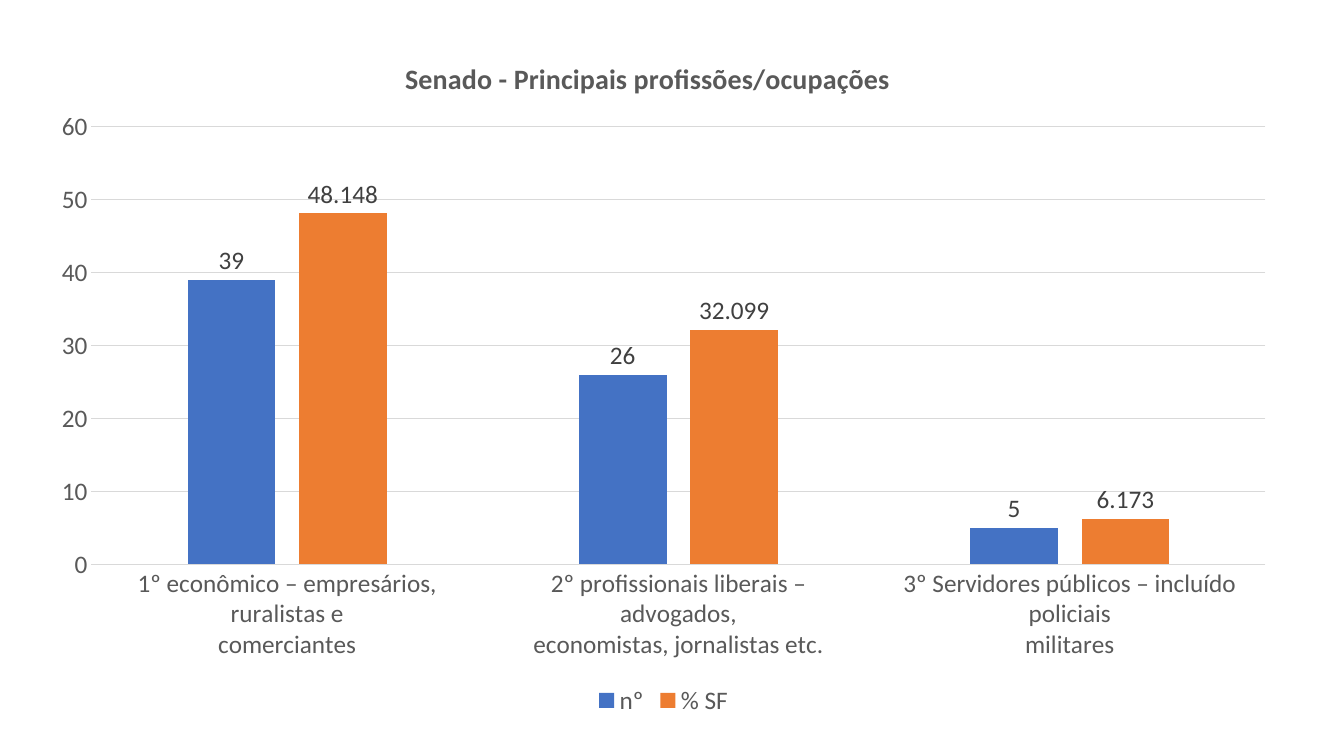
from lxml.etree import SubElement
from pptx import Presentation
from pptx.chart.data import CategoryChartData
from pptx.dml.color import RGBColor
from pptx.enum.chart import (XL_CHART_TYPE, XL_LABEL_POSITION,
                             XL_LEGEND_POSITION, XL_TICK_MARK)
from pptx.oxml.ns import qn
from pptx.util import Inches, Pt

COLORS = {
    "count": "4472C4",
    "share": "ED7D31",
    "text": "595959",
    "label": "404040",
    "grid": "D9D9D9",
}
PROFESSIONS = [
    "1º econômico – empresários, ruralistas e\ncomerciantes",
    "2º profissionais liberais – advogados,\neconomistas, jornalistas etc.",
    "3º Servidores públicos – incluído policiais\nmilitares",
]
# name, values, colour, number format
SERIES = [
    ("nº", (39, 26, 5), "count", "General"),
    ("% SF", (48.148, 32.099, 6.173), "share", "0.000"),
]


class ChartSlide:
    font_name = "Calibri"

    def __init__(self, slide):
        self.slide = slide

    def style_font(self, font, color="text", size=18, bold=False):
        font.name = self.font_name
        font.size = Pt(size)
        font.bold = bold
        font.color.rgb = RGBColor.from_string(COLORS[color])

    def style_line(self, line):
        line.color.rgb = RGBColor.from_string(COLORS["grid"])
        line.width = Pt(0.75)

    def place(self, element, index, inner=False, **fractions):
        """Set a manual layout, in fractions of the chart area."""
        for old in element.findall(qn("c:layout")):
            element.remove(old)
        layout = SubElement(element, qn("c:layout"))
        element.insert(index, layout)
        manual = SubElement(layout, qn("c:manualLayout"))
        if inner:
            SubElement(manual, qn("c:layoutTarget")).set("val", "inner")
        for key in ("x", "y"):
            SubElement(manual, qn(f"c:{key}Mode")).set("val", "edge")
        for key, value in fractions.items():
            SubElement(manual, qn(f"c:{key}")).set("val", str(value))

    def columns(self, left, top, width, height):
        data = CategoryChartData()
        data.categories = PROFESSIONS
        for name, values, _, number_format in SERIES:
            data.add_series(name, values, number_format)
        chart = self.slide.shapes.add_chart(
            XL_CHART_TYPE.COLUMN_CLUSTERED, Inches(left), Inches(top),
            Inches(width), Inches(height), data).chart
        self.style_font(chart.font)
        plot = chart.plots[0]
        plot.gap_width, plot.overlap = 219, -27
        plot.vary_by_categories = False
        for series, (_, _, color, number_format) in zip(plot.series, SERIES):
            series.format.fill.solid()
            series.format.fill.fore_color.rgb = RGBColor.from_string(COLORS[color])
            labels = series.data_labels
            labels.show_value = True
            labels.position = XL_LABEL_POSITION.OUTSIDE_END
            labels.number_format = number_format
            labels.number_format_is_linked = False
            self.style_font(labels.font, "label")
        self.place(chart._chartSpace.chart.plotArea, 0, inner=True,
                   x=0.044, y=0.15, w=0.936, h=0.626)
        return chart

    def title(self, chart, text):
        frame = chart.chart_title.text_frame
        frame.text = text
        self.style_font(frame.paragraphs[0].runs[0].font, size=20, bold=True)
        chart.chart_title.include_in_layout = False
        self.place(chart._chartSpace.chart.find(qn("c:title")), 1, x=0.29, y=0.045)

    def axes(self, chart):
        for axis in (chart.category_axis, chart.value_axis):
            axis.major_tick_mark = axis.minor_tick_mark = XL_TICK_MARK.NONE
            self.style_font(axis.tick_labels.font)
        self.style_line(chart.category_axis.format.line)
        values = chart.value_axis
        values.minimum_scale, values.maximum_scale, values.major_unit = 0, 60, 10
        values.format.line.fill.background()
        values.has_major_gridlines = True
        self.style_line(values.major_gridlines.format.line)

    def legend(self, chart):
        chart.has_legend = True
        chart.legend.position = XL_LEGEND_POSITION.BOTTOM
        chart.legend.include_in_layout = False
        self.style_font(chart.legend.font)


def main():
    deck = Presentation()
    deck.slide_width, deck.slide_height = Inches(13.33), Inches(7.5)
    senate = ChartSlide(deck.slides.add_slide(deck.slide_layouts[6]))

    # Columns by profession
    professions = senate.columns(0.36, 0.22, 12.44, 6.93)
    # Title, axes and legend
    senate.title(professions, "Senado - Principais profissões/ocupações")
    senate.axes(professions)
    senate.legend(professions)

    deck.save("out.pptx")


if __name__ == "__main__":
    main()
